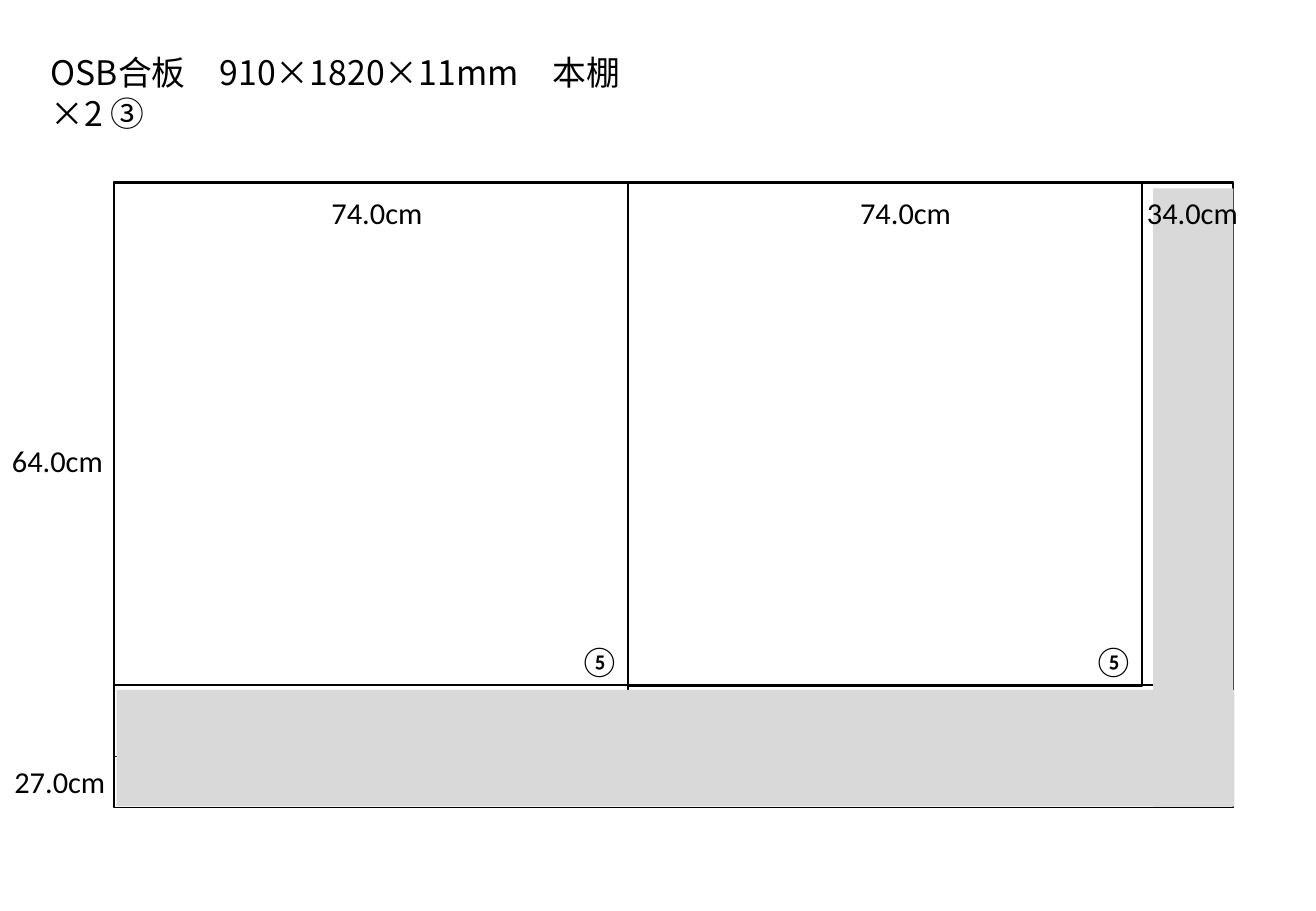
"""Cutting plan for one OSB plywood board, with lengths in percent of the slide."""
from lxml.etree import SubElement
from pptx import Presentation
from pptx.dml.color import RGBColor
from pptx.enum.shapes import MSO_SHAPE
from pptx.enum.text import MSO_AUTO_SIZE as AUTO_SIZE
from pptx.oxml.ns import qn
from pptx.util import Inches, Pt

BLACK = RGBColor(0x00, 0x00, 0x00)
OFFCUT_GREY = RGBColor(0xD9, 0xD9, 0xD9)
LATIN_FONT = "Calibri"
JAPANESE_FONT = "Noto Sans CJK JP"

SLIDE_WIDTH, SLIDE_HEIGHT = Inches(10.83), Inches(7.5)
BOARD_LEFT, BOARD_TOP = 8.68, 20.13
BOARD_WIDTH, BOARD_HEIGHT = 85.04, 68.53
PANEL_WIDTH, PANEL_HEIGHT = 39.06, 55.2
LABEL_WIDTH, LABEL_HEIGHT = 8.86, 5.33
LABEL_TOP = 20.67
MARK_LEFT, MARK_TOP, MARK_WIDTH = 43.12, 69.87, 4.06


def place(left, top, width, height):
    """Turn percentages of the slide into lengths."""
    return (
        int(SLIDE_WIDTH * left / 100),
        int(SLIDE_HEIGHT * top / 100),
        int(SLIDE_WIDTH * width / 100),
        int(SLIDE_HEIGHT * height / 100),
    )


def add_rectangle(slide, *box):
    """Add a rectangle without shadow."""
    shape = slide.shapes.add_shape(MSO_SHAPE.RECTANGLE, *place(*box))
    shape.shadow.inherit = False
    return shape


def add_outline(slide, *box):
    """Add an unfilled rectangle that marks cut edges."""
    shape = add_rectangle(slide, *box)
    shape.fill.background()
    shape.line.color.rgb = BLACK
    shape.line.width = Pt(1)


def add_offcut(slide, *box):
    """Add a grey area of leftover board."""
    shape = add_rectangle(slide, *box)
    shape.fill.solid()
    shape.fill.fore_color.rgb = OFFCUT_GREY
    shape.line.fill.background()


def add_text(slide, text, box, size=18, font=LATIN_FONT, wrap=False):
    """Add a text box holding one run."""
    frame = slide.shapes.add_textbox(*place(*box)).text_frame
    frame.word_wrap = wrap
    frame.auto_size = AUTO_SIZE.SHAPE_TO_FIT_TEXT
    run = frame.paragraphs[0].add_run()
    run.text = text
    run.font.size = Pt(size)
    run.font.name = font
    run.font.color.rgb = BLACK
    if font == JAPANESE_FONT:
        SubElement(run.font._element, qn("a:ea")).set("typeface", font)


def main():
    """Build the cutting plan and save it."""
    presentation = Presentation()
    presentation.slide_width = SLIDE_WIDTH
    presentation.slide_height = SLIDE_HEIGHT
    slide = presentation.slides.add_slide(presentation.slide_layouts[6])

    add_text(slide, "OSB合板　910×1820×11mm　本棚×2 ③", (2.95, 5.07, 48.2, 5.87),
             size=20, font=JAPANESE_FONT, wrap=True)

    add_outline(slide, BOARD_LEFT, BOARD_TOP, BOARD_WIDTH, BOARD_HEIGHT)
    add_outline(slide, BOARD_LEFT, 20, BOARD_WIDTH, PANEL_HEIGHT)
    add_outline(slide, BOARD_LEFT, BOARD_TOP, PANEL_WIDTH, 62.93)
    add_offcut(slide, 8.86, 75.73, 84.95, 12.8)
    add_offcut(slide, 87.63, LABEL_TOP, 6.09, 67.87)
    add_outline(slide, BOARD_LEFT + PANEL_WIDTH, BOARD_TOP, PANEL_WIDTH, PANEL_HEIGHT)

    for text, left, top in (
        ("74.0cm", 24.28, LABEL_TOP),
        ("74.0cm", 64.45, LABEL_TOP),
        ("34.0cm", 86.24, LABEL_TOP),
        ("64.0cm", 0, 47.87),
        ("27.0cm", 0.18, 83.07),
    ):
        add_text(slide, text, (left, top, LABEL_WIDTH, LABEL_HEIGHT))

    for panel in range(2):
        mark_left = MARK_LEFT + panel * PANEL_WIDTH
        add_text(slide, "⑤", (mark_left, MARK_TOP, MARK_WIDTH, LABEL_HEIGHT), wrap=True)

    presentation.save("out.pptx")


if __name__ == "__main__":
    main()
